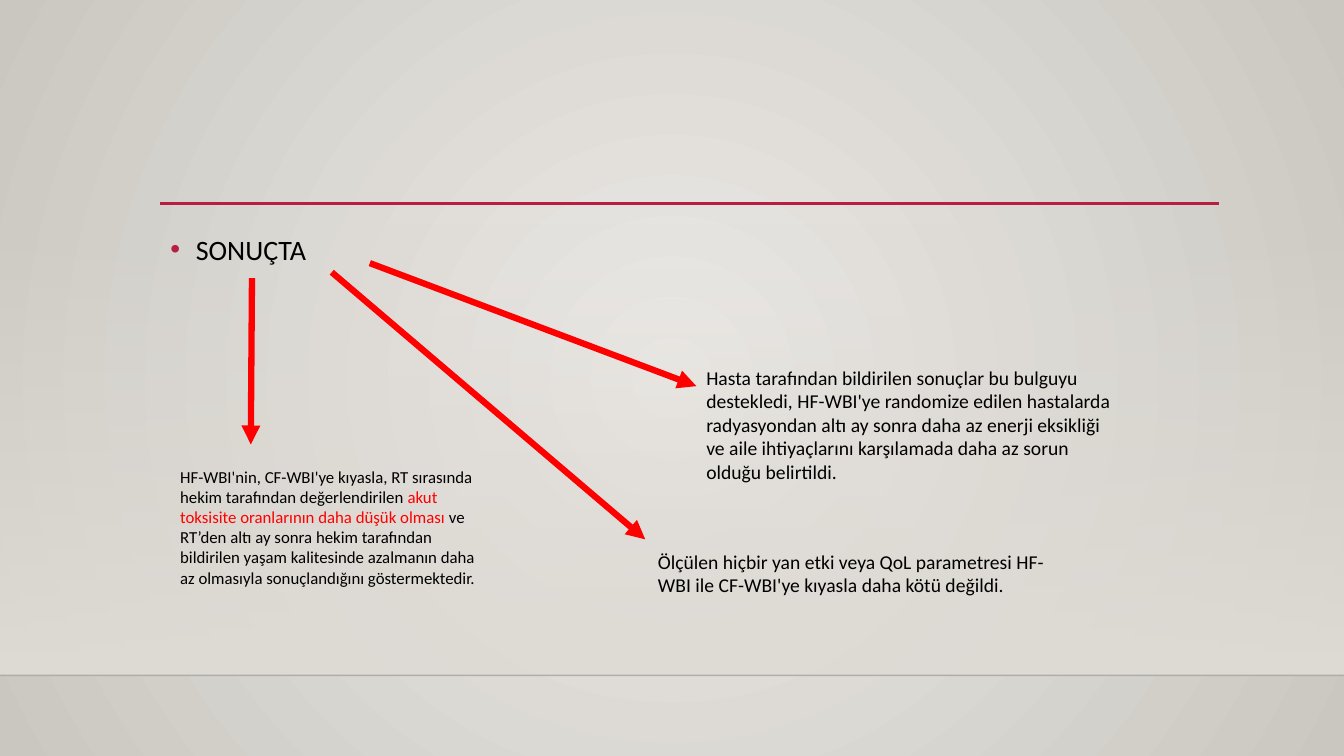
from lxml import etree
from pptx import Presentation
from pptx.dml.color import RGBColor
from pptx.enum.shapes import MSO_CONNECTOR, MSO_SHAPE
from pptx.enum.text import MSO_AUTO_SIZE
from pptx.oxml.ns import qn
from pptx.util import Cm, Pt

STRAIGHT = MSO_CONNECTOR.STRAIGHT
RECT = MSO_SHAPE.RECTANGLE
GROW = MSO_AUTO_SIZE.SHAPE_TO_FIT_TEXT

BLACK = RGBColor(0x00, 0x00, 0x00)
RED = RGBColor(0xFF, 0x00, 0x00)
CRIMSON = RGBColor(0xB7, 0x1E, 0x42)
LIGHT = RGBColor(0xEC, 0xEA, 0xE7)
DARK = RGBColor(0xCA, 0xC7, 0xC1)
SAND = RGBColor(0xDF, 0xDB, 0xD5)
FONT = "Calibri"
WIDTH, HEIGHT = 33.87, 19.05
FLOOR_TOP, FLOOR_BOTTOM = 5.61, 17.02

# Content: lengths in centimetres
HEADING = "SONUÇTA"
# Each note: left, top, width, height, text size, runs with their colours
NOTES = [
    (4.29, 11.63, 8.15, 3.33, 12, [
        ("HF-WBI'nin, CF-WBI'ye kıyasla, RT sırasında hekim tarafından "
         "değerlendirilen ", BLACK),
        ("akut toksisite oranlarının daha düşük olması ", RED),
        ("ve RT’den altı ay sonra hekim tarafından bildirilen yaşam kalitesinde "
         "azalmanın daha az olmasıyla sonuçlandığını göstermektedir.", BLACK)]),
    (17.55, 9.09, 10.82, 3.25, 14, [
        ("Hasta tarafından bildirilen sonuçlar bu bulguyu destekledi, HF-WBI'ye "
         "randomize edilen hastalarda radyasyondan altı ay sonra daha az enerji "
         "eksikliği ve aile ihtiyaçlarını karşılamada daha az sorun olduğu "
         "belirtildi.", BLACK)]),
    (16.33, 13.72, 10.41, 1.45, 14, [
        ("Ölçülen hiçbir yan etki veya QoL parametresi HF-WBI ile CF-WBI'ye "
         "kıyasla daha kötü değildi.", BLACK)]),
]
# Each arrow: start x, start y, end x, end y
ARROWS = [
    (6.35, 7.01, 6.32, 11.2),
    (9.32, 6.63, 17.55, 9.73),
    (8.36, 6.86, 16.26, 13.59),
]


def add(parent, tag, **attrs):
    return etree.SubElement(parent, qn(tag), attrs)


def set_stops(grad, stops):
    """Replace the gradient's contents with (position, colour, opacity) stops."""
    for child in list(grad):
        grad.remove(child)
    gs_list = add(grad, "a:gsLst")
    for pos, color, opacity in stops:
        gs = add(gs_list, "a:gs", pos=str(pos * 1000))
        clr = add(gs, "a:srgbClr", val=str(color))
        add(clr, "a:alpha", val=str(opacity * 1000))


def add_line(s, points, color, width):
    line = s.shapes.add_connector(STRAIGHT, *[Cm(v) for v in points])
    line.line.color.rgb = color
    line.line.width = Pt(width)
    add(line._element.spPr, "a:effectLst")
    return line


def style(font, size, color):
    font.name = FONT
    font.size = Pt(size)
    font.color.rgb = color


prs = Presentation()
prs.slide_width, prs.slide_height = Cm(WIDTH), Cm(HEIGHT)
s = prs.slides.add_slide(prs.slide_layouts[1])
title, body = s.shapes.title, s.placeholders[1]
title._element.getparent().remove(title._element)

# Background: radial gradient from the centre
s.background.fill.gradient()
grad = s._element.find(".//" + qn("a:gradFill"))
set_stops(grad, [(0, LIGHT, 100), (100, DARK, 100)])
circle = add(grad, "a:path", path="circle")
add(circle, "a:fillToRect", l="50000", t="50000", r="50000", b="50000")

# Wall band that fades in downwards, floor edge and heading rule
band = s.shapes.add_shape(RECT, 0, Cm(FLOOR_TOP), Cm(WIDTH),
                          Cm(FLOOR_BOTTOM - FLOOR_TOP))
band.shadow.inherit = False
band.line.fill.background()
band.fill.gradient()
grad = band._element.spPr.find(qn("a:gradFill"))
set_stops(grad, [(0, SAND, 0), (100, SAND, 100)])
add(grad, "a:lin", ang="5400000", scaled="0")

edge = add_line(s, (0, FLOOR_BOTTOM, WIDTH, FLOOR_BOTTOM), BLACK, 1)
add(edge._element.spPr.find(".//" + qn("a:srgbClr")), "a:alpha", val="20000")
add_line(s, (4.04, 5.13, 30.73, 5.13), CRIMSON, 2.5)

# Bulleted heading, in front of the band
s.shapes._spTree.append(body._element)
body.left, body.top, body.width, body.height = Cm(4.04), Cm(5.56), Cm(26.67), Cm(9.58)
p = body.text_frame.paragraphs[0]
p.text = HEADING
p.line_spacing = 1.2
p.space_before = Pt(0)
pPr = p._p.get_or_add_pPr()
pPr.set("marL", str(Cm(0.64)))
pPr.set("indent", str(Cm(-0.64)))
add(add(pPr, "a:buClr"), "a:srgbClr", val=str(CRIMSON))
add(pPr, "a:buFont", typeface="Arial")
add(pPr, "a:buChar", char="•")
style(p.runs[0].font, 20, BLACK)

# Arrows from the heading to the notes
for points in ARROWS:
    arrow = add_line(s, points, RED, 4.5)
    add(arrow._element.spPr.find(qn("a:ln")), "a:tailEnd", type="triangle")

# Notes
for left, top, width, height, size, runs in NOTES:
    tf = s.shapes.add_textbox(Cm(left), Cm(top), Cm(width), Cm(height)).text_frame
    tf.word_wrap = True
    tf.auto_size = GROW
    for text, color in runs:
        r = tf.paragraphs[0].add_run()
        r.text = text
        style(r.font, size, color)

prs.save("out.pptx")
